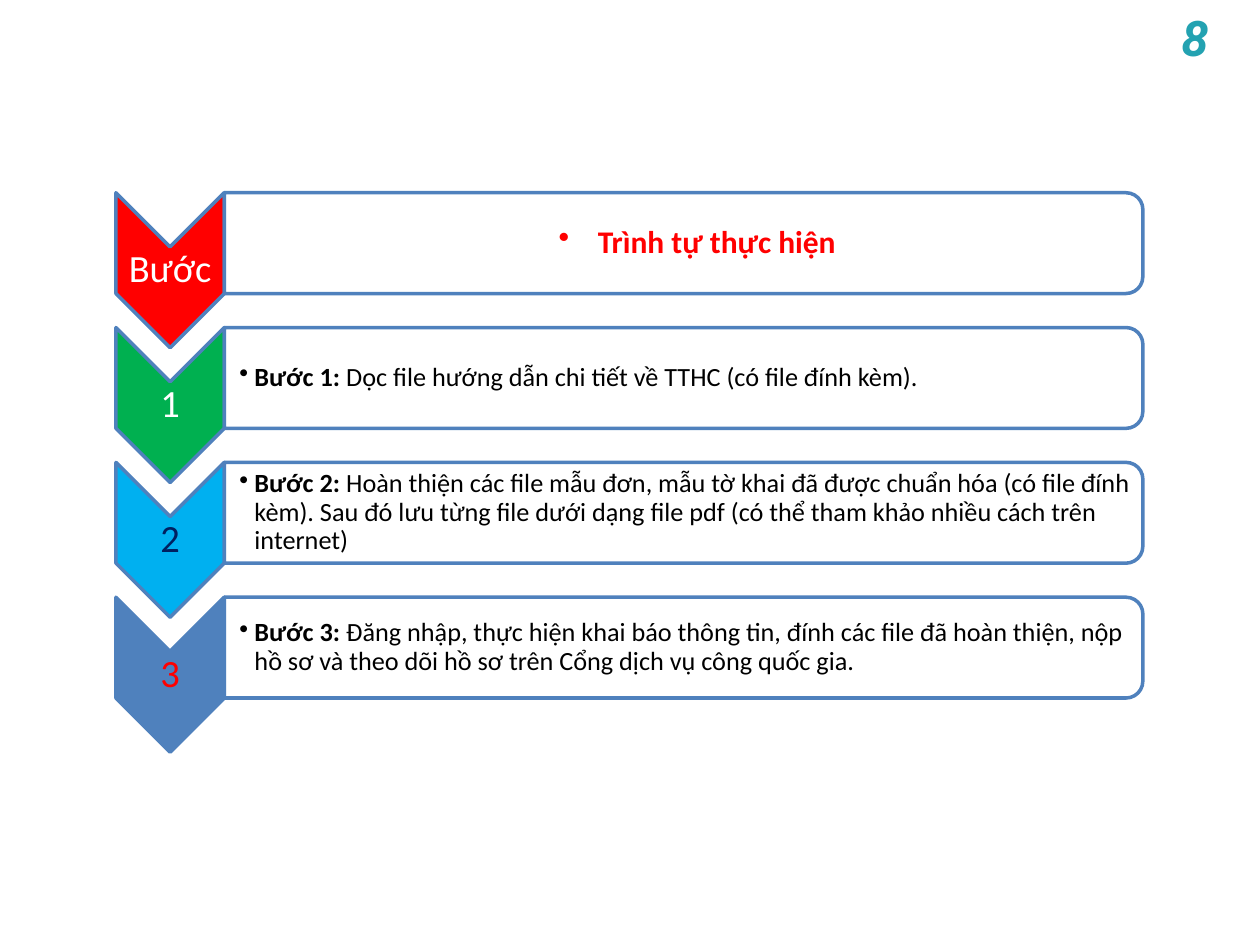
from dataclasses import dataclass

from lxml.etree import SubElement
from pptx import Presentation
from pptx.dml.color import RGBColor
from pptx.enum.shapes import MSO_SHAPE
from pptx.enum.text import MSO_ANCHOR, PP_ALIGN
from pptx.oxml.ns import qn
from pptx.util import Inches, Pt


@dataclass(frozen=True)
class Theme:
    font: str = "Calibri"
    number_font: str = "Roboto"
    white: str = "FFFFFF"
    black: str = "000000"
    red: str = "FF0000"
    green: str = "00B050"
    sky: str = "00B0F0"
    blue: str = "4F81BD"
    navy: str = "002060"
    teal: str = "23A2B1"
    label_size: int = 22
    heading_size: int = 18
    body_size: int = 15
    number_size: int = 28
    line_width: int = 2
    panel_opacity: int = 90


THEME = Theme()

# Rows of the step list, in inches
ROW_TOP, ROW_PITCH = 1.53, 1.07
CHEVRON_LEFT, CHEVRON_WIDTH, CHEVRON_HEIGHT = 0.92, 0.86, 1.23
PANEL_LEFT, PANEL_WIDTH, PANEL_HEIGHT = 1.78, 7.29, 0.8
LABEL_OFFSET, LABEL_HEIGHT = 0.43, 0.37
TEXT_OFFSET, TEXT_WIDTH, TEXT_HEIGHT = 0.04, 7.26, 0.72

# Chevron label, chevron fill, label colour, bold lead, remaining text
STEPS = [
    ("Bước", THEME.red, THEME.white, "Trình tự thực hiện", ""),
    ("1", THEME.green, THEME.white, "Bước 1: ",
     "Dọc file hướng dẫn chi tiết về TTHC (có file đính kèm)."),
    ("2", THEME.sky, THEME.navy, "Bước 2: ",
     "Hoàn thiện các file mẫu đơn, mẫu tờ khai đã được chuẩn hóa (có file đính kèm). "
     "Sau đó lưu từng file dưới dạng file pdf (có thể tham khảo nhiều cách trên internet)"),
    ("3", THEME.blue, THEME.red, "Bước 3: ",
     "Đăng nhập, thực hiện khai báo thông tin, đính các file đã hoàn thiện, nộp hồ sơ "
     "và theo dõi hồ sơ trên Cổng dịch vụ công quốc gia."),
]


def add_turned_shape(slide, preset, left, top, width, height, fill):
    """Add a shape turned by 90 degrees that covers the given box once turned."""
    shape = slide.shapes.add_shape(
        preset,
        Inches(left + (width - height) / 2), Inches(top + (height - width) / 2),
        Inches(height), Inches(width))
    shape.rotation = 90
    shape.shadow.inherit = False
    shape.fill.solid()
    shape.fill.fore_color.rgb = RGBColor.from_string(fill)
    shape.line.color.rgb = RGBColor.from_string(THEME.blue)
    shape.line.width = Pt(THEME.line_width)
    return shape


def set_opacity(shape, percent):
    color = shape.fill._xPr.find(qn("a:solidFill"))[0]
    SubElement(color, qn("a:alpha"), val=str(percent * 1000))


def add_text(slide, box, runs, size, color, font=THEME.font, margins=(0.02, 0.02),
             alignment=PP_ALIGN.CENTER, anchor=MSO_ANCHOR.MIDDLE, line_spacing=0.9):
    """Add one paragraph; margins are the left one and the one for other sides."""
    frame = slide.shapes.add_textbox(*map(Inches, box)).text_frame
    frame.word_wrap = True
    frame.vertical_anchor = anchor
    frame.margin_left = Inches(margins[0])
    frame.margin_right = frame.margin_top = frame.margin_bottom = Inches(margins[1])
    paragraph = frame.paragraphs[0]
    paragraph.alignment = alignment
    paragraph.line_spacing = line_spacing
    paragraph.font.name = font
    paragraph.font.size = Pt(size)
    paragraph.font.color.rgb = RGBColor.from_string(color)
    for text, bold in runs:
        run = paragraph.add_run()
        run.text = text
        run.font.bold = bold
    return paragraph


def set_bullet(paragraph, indent):
    properties = paragraph._p.get_or_add_pPr()
    properties.set("marL", str(Inches(indent)))
    properties.set("indent", str(-Inches(indent)))
    bullet = properties.makeelement(qn("a:buChar"), {"char": "•"})
    properties.insert_element_before(bullet, "a:tabLst", "a:defRPr", "a:extLst")


def add_step(slide, row, label, fill, label_color, lead, body):
    top = ROW_TOP + row * ROW_PITCH
    add_turned_shape(slide, MSO_SHAPE.CHEVRON, CHEVRON_LEFT, top,
                     CHEVRON_WIDTH, CHEVRON_HEIGHT, fill)
    add_text(slide, (CHEVRON_LEFT, top + LABEL_OFFSET, CHEVRON_WIDTH, LABEL_HEIGHT),
             [(label, False)], THEME.label_size, label_color)
    panel = add_turned_shape(slide, MSO_SHAPE.ROUND_2_SAME_RECTANGLE, PANEL_LEFT, top,
                             PANEL_WIDTH, PANEL_HEIGHT, THEME.white)
    set_opacity(panel, THEME.panel_opacity)

    text_box = (PANEL_LEFT, top + TEXT_OFFSET, TEXT_WIDTH, TEXT_HEIGHT)
    if body:
        paragraph = add_text(slide, text_box, [(lead, True), (body, False)],
                             THEME.body_size, THEME.black, margins=(0.12, 0.01),
                             alignment=PP_ALIGN.LEFT)
        set_bullet(paragraph, 0.12)
    else:
        paragraph = add_text(slide, text_box, [(lead, True)], THEME.heading_size,
                             THEME.red, margins=(0.28, 0.03))
        set_bullet(paragraph, 0.31)


def add_slide_number(slide, number):
    paragraph = add_text(slide, (8.92, 0.01, 1.08, 0.57), [(number, True)],
                         THEME.number_size, THEME.teal, font=THEME.number_font,
                         margins=(0.1, 0.05), anchor=MSO_ANCHOR.TOP, line_spacing=1.0)
    paragraph.font.italic = True


def main():
    presentation = Presentation()
    presentation.slide_width, presentation.slide_height = Inches(10), Inches(7.5)
    slide = presentation.slides.add_slide(presentation.slide_layouts[6])
    for row, step in enumerate(STEPS):
        add_step(slide, row, *step)
    add_slide_number(slide, "8")
    presentation.save("out.pptx")


if __name__ == "__main__":
    main()
